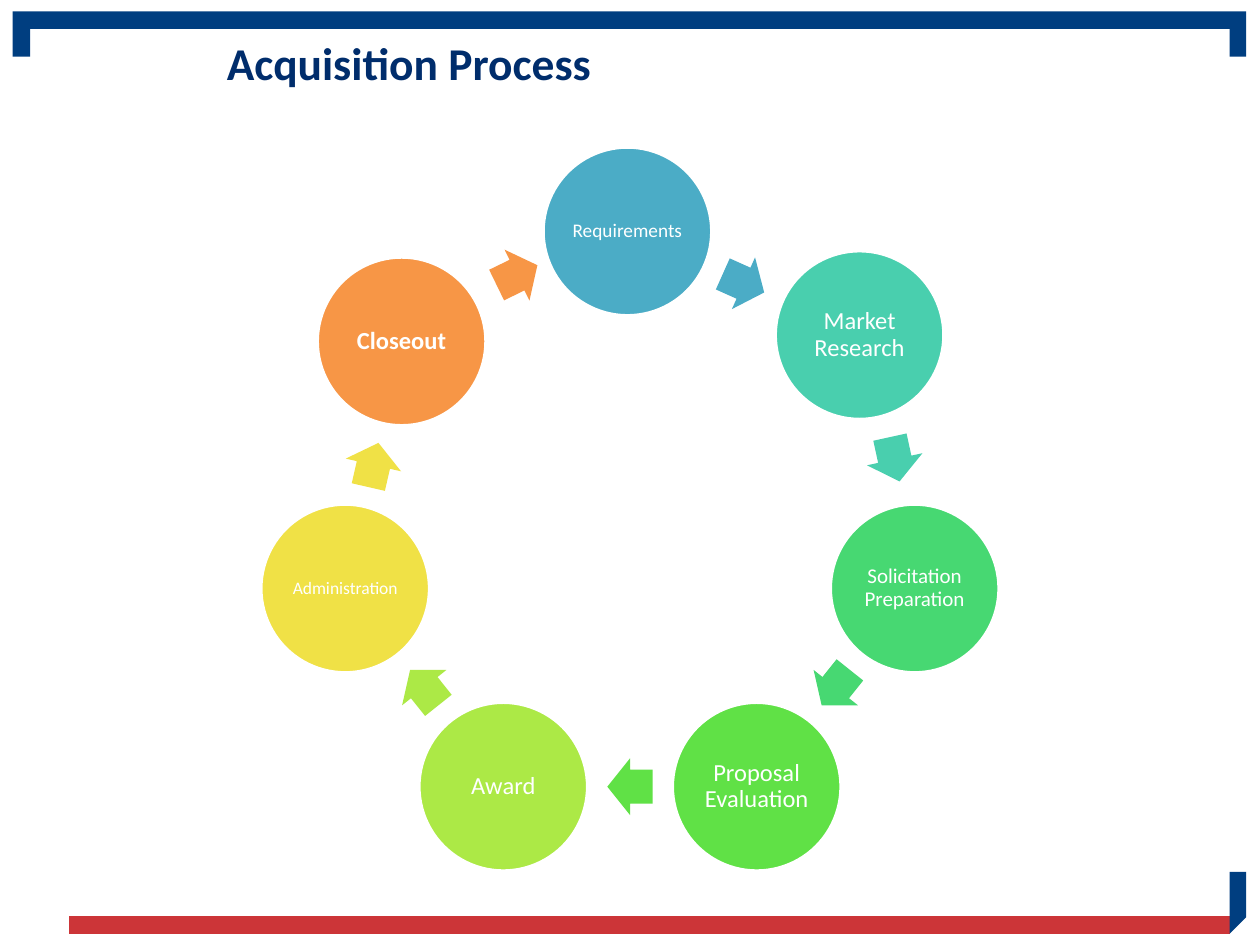
from math import atan2, cos, degrees, pi, sin

from pptx import Presentation
from pptx import util as u
from pptx.dml.color import RGBColor
from pptx.enum import shapes, text

# Content: label, colour, size, bold, circle nudge, nudge of the arrow after it
STEPS = [
    ("Requirements", "blue", 11, False, (-0.2, 0), (0, 0)),
    ("Market Research", "teal", 14, False, (0.1, -0.5), (0.6, -0.2)),
    ("Solicitation Preparation", "sea", 12, False, (0, 0), (0, 0)),
    ("Proposal Evaluation", "green", 14, False, (0, 0), (0, 0)),
    ("Award", "lime", 14, False, (0, 0), (0, 0)),
    ("Administration", "yellow", 10, False, (0, 0), (0, 0)),
    ("Closeout", "orange", 14, True, (0, 0), (0.2, -0.9)),
]
COLORS = {
    "navy": "003E80", "red": "CC3538", "title": "002D6C", "white": "FFFFFF",
    "blue": "4BACC6", "teal": "49CFAE", "sea": "47D872", "green": "60E146",
    "lime": "ACE946", "yellow": "F0E146", "orange": "F79646",
}

# All lengths are percentages of the slide width
WIDTH, HEIGHT = 100, 75
RING_X, RING_Y, RING_R = 50, 41.55, 23.18
CIRCLE = 13.4
ARROW_W, ARROW_H = 3.6, 4.5

# Frame edges
LEFT, RIGHT, INNER = 1, 98.9, 97.6
TOP, BAND, DROP = 0.9, 2.3, 4.5
LOW, BASE = 72.7, 74.1
FRAME = [
    ("navy", [
        [(INNER, TOP), (LEFT, TOP), (LEFT, DROP), (2.4, DROP), (2.4, BAND), (INNER, BAND)],
        [(RIGHT, TOP), (INNER, TOP), (INNER, DROP), (RIGHT, DROP)],
    ]),
    ("red", [[(INNER, LOW), (5.5, LOW), (5.5, BASE), (INNER, BASE)]]),
    ("navy", [[(RIGHT, 69.2), (INNER, 69.2), (INNER, BASE), (RIGHT, 72.8)]]),
]


def length(share):
    return u.Inches(share / 10)


def color(name):
    return RGBColor.from_string(COLORS[name])


def paint(s, fill, line=None):
    s.shadow.inherit = False
    s.fill.solid()
    s.fill.fore_color.rgb = color(fill)
    if line:
        s.line.color.rgb = color(line)
        s.line.width = u.Pt(2)
    else:
        s.line.fill.background()


def write(s, words, *, size, fill="white", bold=False, inset=0.0,
          align=text.PP_ALIGN.CENTER, anchor=text.MSO_ANCHOR.MIDDLE, spacing=None):
    tf = s.text_frame
    tf.word_wrap = True
    tf.vertical_anchor = anchor
    tf.margin_left = tf.margin_right = tf.margin_top = tf.margin_bottom = u.Inches(inset)
    p = tf.paragraphs[0]
    p.alignment = align
    p.line_spacing = spacing
    r = p.add_run()
    r.text = words
    r.font.name, r.font.size, r.font.bold = "Calibri", u.Pt(size), bold
    r.font.color.rgb = color(fill)


def add_centered(slide, kind, x, y, w, h):
    return slide.shapes.add_shape(
        kind, length(x - w / 2), length(y - h / 2), length(w), length(h))


def add_outline(slide, fill, contours):
    start, *rest = [[(length(x), length(y)) for x, y in c] for c in contours]
    builder = slide.shapes.build_freeform(*start[0])
    builder.add_line_segments(start[1:], close=True)
    for contour in rest:
        builder.move_to(*contour[0])
        builder.add_line_segments(contour[1:], close=True)
    paint(builder.convert_to_shape(), fill)


def main():
    prs = Presentation()
    prs.slide_width, prs.slide_height = length(WIDTH), length(HEIGHT)
    slide = prs.slides.add_slide(prs.slide_layouts[6])

    # Frame
    for fill, contours in FRAME:
        add_outline(slide, fill, contours)

    # Title
    title = slide.shapes.add_textbox(length(18), length(2.8), length(64), length(4.4))
    write(title, "Acquisition Process", size=26, fill="title", bold=True,
          align=text.PP_ALIGN.LEFT, anchor=text.MSO_ANCHOR.TOP)

    # Circles stand at equal angles, clockwise from the top
    centers = []
    for i, (*_, (dx, dy), _arrow) in enumerate(STEPS):
        angle = 2 * pi * i / len(STEPS)
        centers.append((RING_X + RING_R * sin(angle) + dx,
                        RING_Y - RING_R * cos(angle) + dy))

    # Each arrow lies midway to the next circle and points at it
    for i, (label, fill, size, bold, _, (dx, dy)) in enumerate(STEPS):
        x, y = centers[i]
        next_x, next_y = centers[(i + 1) % len(STEPS)]
        s = add_centered(slide, shapes.MSO_SHAPE.OVAL, x, y, CIRCLE, CIRCLE)
        paint(s, fill, line="white")
        write(s, label, size=size, bold=bold, inset=0.02, spacing=0.9)

        arrow = add_centered(slide, shapes.MSO_SHAPE.RIGHT_ARROW, (x + next_x) / 2 + dx,
                             (y + next_y) / 2 + dy, ARROW_W, ARROW_H)
        arrow.adjustments[0], arrow.adjustments[1] = 0.6, 0.5
        arrow.rotation = round(degrees(atan2(next_y - y, next_x - x)) % 360, 1)
        paint(arrow, fill)

    prs.save("out.pptx")


if __name__ == "__main__":
    main()
